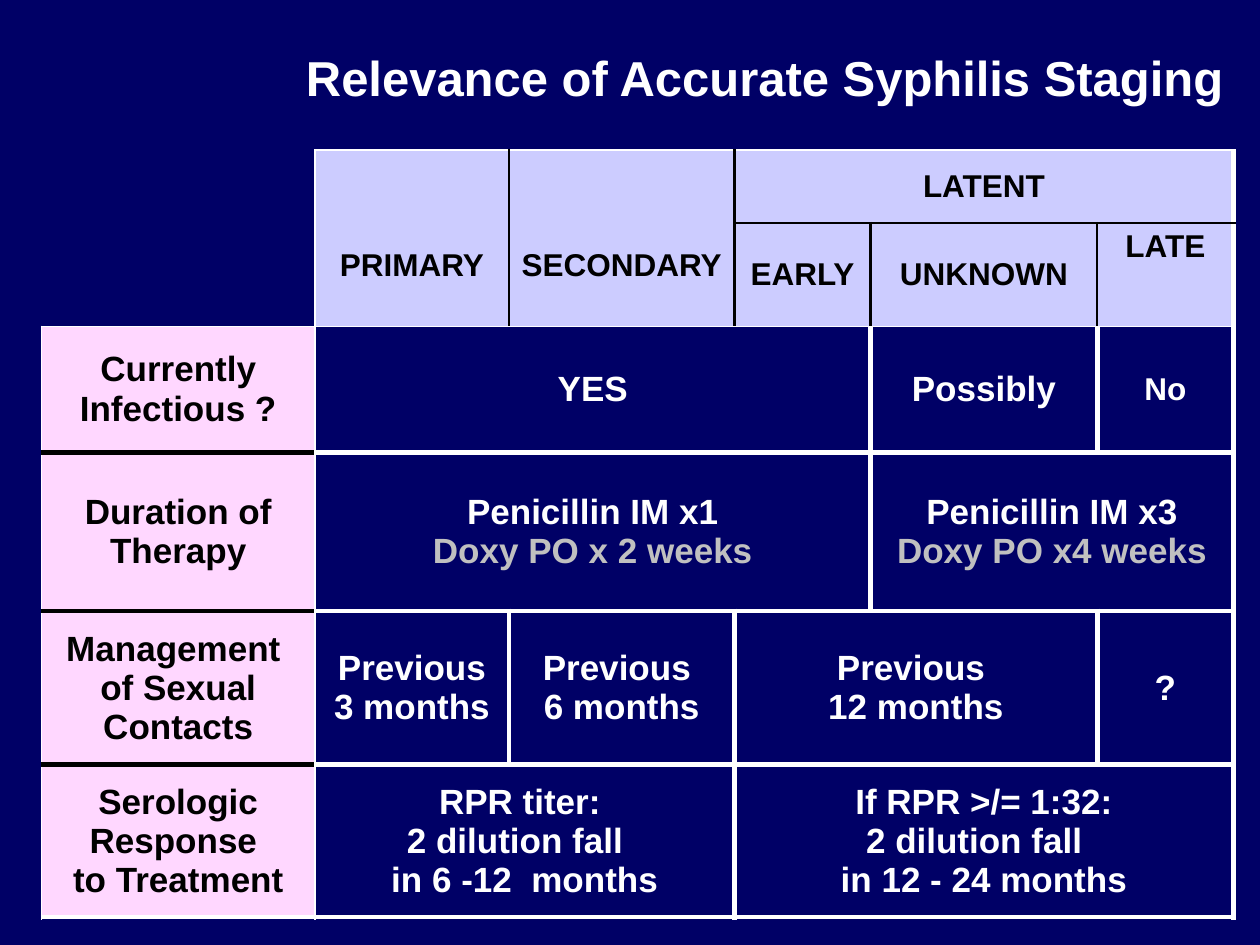
from lxml import etree
from pptx import Presentation
from pptx.dml.color import RGBColor
from pptx.enum import text
from pptx.oxml import ns
from pptx.util import Inches, Pt

NAVY = RGBColor(0x00, 0x00, 0x66)
LAVENDER = RGBColor(0xCC, 0xCC, 0xFF)
PINK = RGBColor(0xFF, 0xD7, 0xFF)
WHITE = RGBColor(0xFF, 0xFF, 0xFF)
BLACK = RGBColor(0x00, 0x00, 0x00)
SILVER = RGBColor(0xC0, 0xC0, 0xC0)

PLAIN_STYLE = "{2D5ABB26-0587-4C30-8999-92F81FD0307C}"
COLUMNS = [2.17, 1.54, 1.79, 1.08, 1.8, 1.08]
ROWS = [0.58, 0.82, 1, 1.26, 1.22, 1.21]
HEADER_ROWS = 2

# (row, column, row span, column span, lines)
CELLS = [
    (0, 1, 2, 1, ["PRIMARY"]),
    (0, 2, 2, 1, ["SECONDARY"]),
    (0, 3, 1, 3, ["LATENT"]),
    (1, 3, 1, 1, ["EARLY"]),
    (1, 4, 1, 1, ["UNKNOWN"]),
    (1, 5, 1, 1, ["LATE"]),
    (2, 0, 1, 1, ["Currently Infectious ?"]),
    (2, 1, 1, 3, ["YES"]),
    (2, 4, 1, 1, ["Possibly"]),
    (2, 5, 1, 1, ["No"]),
    (3, 0, 1, 1, ["Duration of Therapy"]),
    (3, 1, 1, 3, ["Penicillin IM x1", "Doxy PO x 2 weeks"]),
    (3, 4, 1, 2, ["Penicillin IM x3", "Doxy PO x4 weeks"]),
    (4, 0, 1, 1, ["Management ", "of Sexual Contacts"]),
    (4, 1, 1, 1, ["Previous 3 months"]),
    (4, 2, 1, 1, ["Previous ", "6 months"]),
    (4, 3, 1, 2, ["Previous ", "12 months"]),
    (4, 5, 1, 1, ["?"]),
    (5, 0, 1, 1, ["Serologic Response ", "to Treatment"]),
    (5, 1, 1, 2, ["RPR titer: ", "2 dilution fall  ", "in 6 -12  months"]),
    (5, 3, 1, 3, ["If RPR >/= 1:32:", "2 dilution fall  ", "in 12 - 24 months"]),
]


def style_font(paragraph, size, color):
    """Give a paragraph the bold slide font."""
    font = paragraph.font
    font.name, font.size, font.bold = "Arial", Pt(size), True
    font.color.rgb = color


def cell_edges(row, column, last_row, last_column):
    """Return the colour and width of each edge of a merged area."""
    thin, thick = (WHITE, 1), (WHITE, 3)
    at_right = last_column == len(COLUMNS) - 1
    if row < HEADER_ROWS:
        rule = (BLACK, 1.5)
        return {
            "lnL": thin if column == 1 else rule,
            "lnR": thick if at_right else rule,
            "lnT": thin if row == 0 else rule,
            "lnB": thin if last_row == HEADER_ROWS - 1 else rule,
        }
    rule = (BLACK, 3) if column == 0 else thick
    return {
        "lnL": thin if column <= 1 else thick,
        "lnR": thin if column == 0 else thick,
        "lnT": thin if row == HEADER_ROWS else rule,
        "lnB": thick if last_row == len(ROWS) - 1 else rule,
    }


def draw_edge(cell, tag, color, width):
    """Add one border line to a cell."""
    properties = cell._tc.get_or_add_tcPr()
    line = etree.SubElement(properties, ns.qn(f"a:{tag}"), w=str(Pt(width)))
    fill = etree.SubElement(line, ns.qn("a:solidFill"))
    etree.SubElement(fill, ns.qn("a:srgbClr"), val=str(color))


def draw_borders(table, row, column, last_row, last_column):
    """Draw every edge on the first cell and outer edges on the merged ones."""
    edges = cell_edges(row, column, last_row, last_column)
    for r in range(row, last_row + 1):
        for c in range(column, last_column + 1):
            is_first = (r, c) == (row, column)
            outer = {"lnL": c == column, "lnR": c == last_column,
                     "lnT": r == row, "lnB": r == last_row}
            for tag, edge in edges.items():
                if is_first or outer[tag]:
                    draw_edge(table.cell(r, c), tag, *edge)


def fill_cell(table, row, column, row_span, column_span, lines):
    """Merge, border, colour and write one area of the table."""
    last_row, last_column = row + row_span - 1, column + column_span - 1
    cell = table.cell(row, column)
    if row_span * column_span > 1:
        cell.merge(table.cell(last_row, last_column))
    draw_borders(table, row, column, last_row, last_column)
    is_header, is_label = row < HEADER_ROWS, column == 0
    cell.fill.solid()
    cell.fill.fore_color.rgb = LAVENDER if is_header else PINK if is_label else NAVY
    is_late = lines == ["LATE"]
    cell.vertical_anchor = text.MSO_ANCHOR.TOP if is_late else text.MSO_ANCHOR.MIDDLE
    if row_span > 1:
        cell.margin_top = Inches(0.48)
    cell.text_frame.text = "\n".join(lines)
    for paragraph in cell.text_frame.paragraphs:
        paragraph.alignment = text.PP_ALIGN.CENTER
        color = BLACK if is_header or is_label else WHITE
        if paragraph.text.startswith("Doxy"):
            color = SILVER
        style_font(paragraph, 18 if is_header or lines == ["No"] else 20, color)


def add_staging_table(slide, left, top):
    """Build the staging table from its top left corner."""
    frame = slide.shapes.add_table(
        len(ROWS), len(COLUMNS), left, top, Inches(sum(COLUMNS)), Inches(sum(ROWS)))
    table = frame.table
    table.first_row = table.horz_banding = False
    table._tbl.tblPr.find(ns.qn("a:tableStyleId")).text = PLAIN_STYLE
    for column, width in zip(table.columns, COLUMNS):
        column.width = Inches(width)
    for row, height in zip(table.rows, ROWS):
        row.height = Inches(height)
    for area in CELLS:
        fill_cell(table, *area)


def add_title(slide, left, top, width, height):
    """Write the slide title in the given box."""
    frame = slide.shapes.add_textbox(left, top, width, height).text_frame
    frame.word_wrap = False
    frame.auto_size = text.MSO_AUTO_SIZE.SHAPE_TO_FIT_TEXT
    frame.text = "Relevance of Accurate Syphilis Staging"
    style_font(frame.paragraphs[0], 28, WHITE)


def main():
    """Build and save the presentation."""
    presentation = Presentation()
    presentation.slide_width, presentation.slide_height = Inches(10), Inches(7.5)
    slide = presentation.slides.add_slide(presentation.slide_layouts[6])
    slide.background.fill.solid()
    slide.background.fill.fore_color.rgb = NAVY
    add_staging_table(slide, Inches(0.33), Inches(1.19))
    add_title(slide, Inches(2.33), Inches(0.33), Inches(7.57), Inches(0.57))
    presentation.save("out.pptx")


if __name__ == "__main__":
    main()
